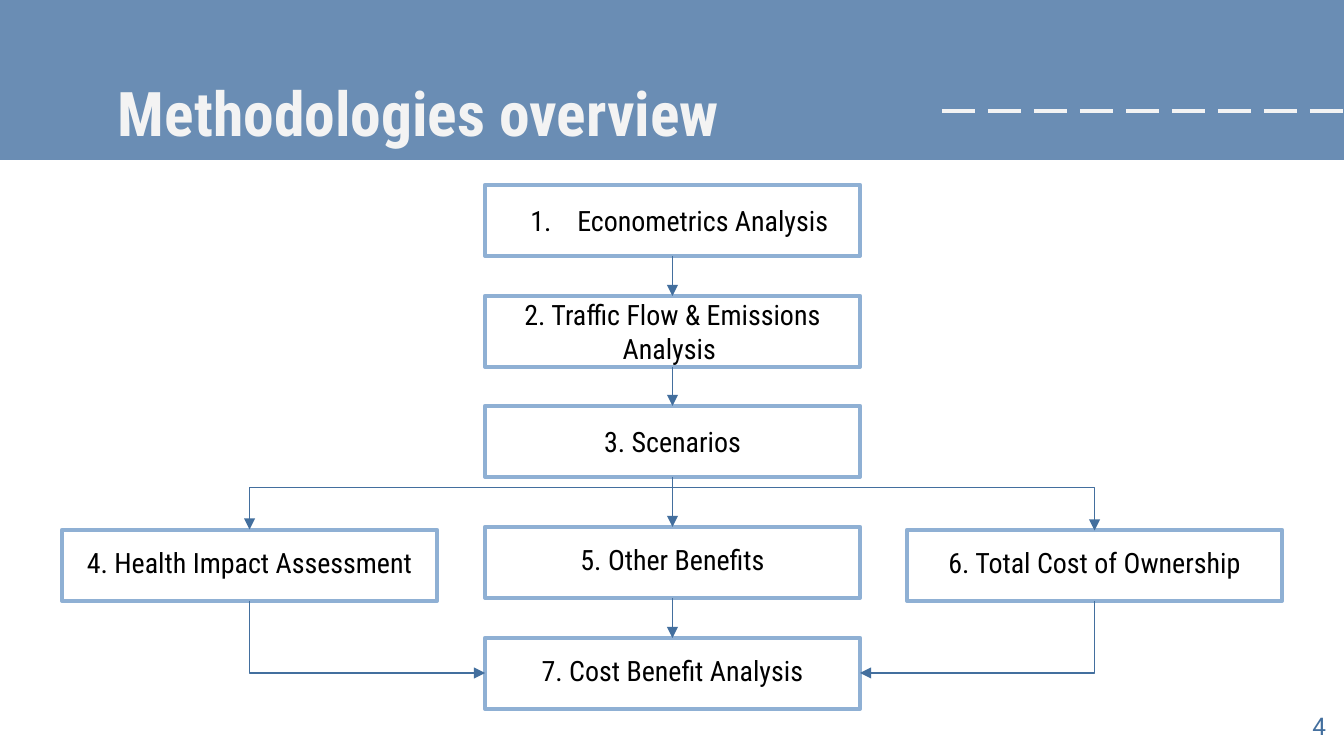
from lxml.etree import SubElement
from pptx import Presentation
from pptx.dml.color import RGBColor
from pptx.enum.dml import MSO_LINE
from pptx.enum.shapes import MSO_CONNECTOR, MSO_SHAPE
from pptx.enum.text import MSO_ANCHOR, PP_ALIGN
from pptx.oxml.ns import qn
from pptx.util import Pt

PX = 914400 / 134.4
HEADER = RGBColor(0x6A, 0x8D, 0xB4)
PALE = RGBColor(0xF3, 0xF3, 0xF3)
BORDER = RGBColor(0x8F, 0xB0, 0xD4)
ARROW = RGBColor(0x43, 0x6F, 0x9E)
BLACK = RGBColor(0, 0, 0)

BOX_WIDTH, BOX_HEIGHT = 375, 71
LEFT, CENTRE, RIGHT = 62, 485, 907
TOP, BOTTOM = 0, 2
STEPS = [
    ("econometrics", "Econometrics Analysis ", CENTRE, 185, MSO_ANCHOR.MIDDLE),
    ("traffic", "2. Traffic Flow & Emissions Analysis ", CENTRE, 296, MSO_ANCHOR.MIDDLE),
    ("scenarios", "3. Scenarios", CENTRE, 406, MSO_ANCHOR.MIDDLE),
    ("health", "4. Health Impact Assessment", LEFT, 530, MSO_ANCHOR.TOP),
    ("benefits", "5. Other Benefits", CENTRE, 527, MSO_ANCHOR.TOP),
    ("ownership", "6. Total Cost of Ownership", RIGHT, 530, MSO_ANCHOR.TOP),
    ("cost_benefit", "7. Cost Benefit Analysis", CENTRE, 638, MSO_ANCHOR.TOP),
]
MAIN_CHAIN = ["econometrics", "traffic", "scenarios", "benefits", "cost_benefit"]
LEFT_X, RIGHT_X = LEFT + BOX_WIDTH / 2, RIGHT + BOX_WIDTH / 2
SIDE_TOP, SIDE_BOTTOM, LAST_MIDDLE = 530, 601, 673
BRANCH_RISE = 42


def px(length):
    return round(length * PX)


def apply(target, **values):
    for name, value in values.items():
        setattr(target, name, value)


def write(shape, text, size, color, font="Roboto Condensed", bold=False,
          align=PP_ALIGN.LEFT, anchor=MSO_ANCHOR.TOP, top=13, bottom=13):
    frame = shape.text_frame
    apply(frame, word_wrap=True, vertical_anchor=anchor, margin_left=px(13),
          margin_right=px(13), margin_top=px(top), margin_bottom=px(bottom))
    para = frame.paragraphs[0]
    para.alignment = align
    span = para.add_run()
    span.text = text
    apply(span.font, name=font, size=Pt(size), bold=bold)
    span.font.color.rgb = color
    return para


def add_line(page, kind, start, end, color, width, ends=()):
    line = page.shapes.add_connector(kind, *map(px, (*start, *end)))
    line.line.color.rgb = color
    line.line.width = Pt(width)
    properties = line._element.spPr
    for tag in ends:
        SubElement(properties.find(qn("a:ln")), qn(tag), type="triangle")
    SubElement(properties, qn("a:effectLst"))
    return line


def add_bent(page, start, end, preset, ends=("a:tailEnd",), bend=None):
    """Draw a connector that leaves its start vertically."""
    (x1, y1), (x2, y2) = start, end
    width, height = max(abs(y2 - y1), 1), abs(x2 - x1)
    left, top = (x1 + x2 - width) / 2, (y1 + y2 - height) / 2
    line = add_line(page, MSO_CONNECTOR.ELBOW, (left, top),
                    (left + width, top + height), ARROW, 0.75, ends)
    properties = line._element.spPr
    frame = properties.find(qn("a:xfrm"))
    rightward = x2 > x1
    frame.set("rot", str((270 if rightward else 90) * 60000))
    if rightward:
        frame.set("flipH", "1")
    geometry = properties.find(qn("a:prstGeom"))
    geometry.set("prst", preset)
    if bend is not None:
        guides = geometry.get_or_add_avLst()
        SubElement(guides, qn("a:gd"), name="adj1",
                   fmla=f"val {round(bend / width * 100000)}")


def add_number(para):
    properties = para._p.get_or_add_pPr()
    properties.set("marL", str(px(67)))
    properties.set("indent", str(-px(47)))
    color = SubElement(properties, qn("a:buClr"))
    SubElement(color, qn("a:srgbClr"), val=str(BLACK))
    SubElement(properties, qn("a:buFont"), typeface="Roboto Condensed")
    SubElement(properties, qn("a:buAutoNum"), type="arabicPeriod")


def add_header(page):
    band = page.shapes.add_shape(MSO_SHAPE.RECTANGLE, *map(px, (-3, 0, 1350, 160)))
    band.shadow.inherit = False
    band.fill.solid()
    band.fill.fore_color.rgb = HEADER
    band.line.fill.background()
    dashes = add_line(page, MSO_CONNECTOR.STRAIGHT, (942, 111), (1344, 111), PALE, 2.25)
    dashes.line.dash_style = MSO_LINE.LONG_DASH
    title = page.shapes.add_textbox(*map(px, (105, 62, 1134, 85)))
    write(title, "Methodologies overview", 33, PALE, bold=True)
    number = page.shapes.add_textbox(*map(px, (1258, 698, 81, 58)))
    write(number, "4", 13, ARROW, font="Roboto", align=PP_ALIGN.RIGHT)


def add_step(page, text, left, top, anchor):
    box = page.shapes.add_shape(MSO_SHAPE.ROUNDED_RECTANGLE,
                                *map(px, (left, top, BOX_WIDTH, BOX_HEIGHT)))
    box.adjustments[0] = 0
    box.shadow.inherit = False
    box.fill.background()
    box.line.color.rgb = BORDER
    box.line.width = Pt(2.25)
    inset = 16 if anchor == MSO_ANCHOR.TOP else 0
    para = write(box, text, 15, BLACK, align=PP_ALIGN.CENTER, anchor=anchor,
                 top=inset, bottom=0)
    return box, para


def main():
    deck = Presentation()
    apply(deck, slide_width=px(1344), slide_height=px(756))
    page = deck.slides.add_slide(deck.slide_layouts[6])
    add_header(page)
    boxes = {}
    for key, *step in STEPS:
        boxes[key], para = add_step(page, *step)
        if key == "econometrics":
            add_number(para)
    for source, target in zip(MAIN_CHAIN, MAIN_CHAIN[1:]):
        arrow = add_line(page, MSO_CONNECTOR.STRAIGHT, (0, 0), (0, 0), ARROW, 0.75,
                         ("a:tailEnd",))
        arrow.begin_connect(boxes[source], BOTTOM)
        arrow.end_connect(boxes[target], TOP)
    for start_x, end_x in ((LEFT_X, CENTRE), (RIGHT_X, CENTRE + BOX_WIDTH)):
        add_bent(page, (start_x, SIDE_BOTTOM), (end_x, LAST_MIDDLE), "bentConnector2")
    add_bent(page, (LEFT_X, SIDE_TOP), (RIGHT_X, SIDE_TOP), "bentConnector3",
             ("a:headEnd", "a:tailEnd"), -BRANCH_RISE)
    deck.save("out.pptx")


if __name__ == "__main__":
    main()
